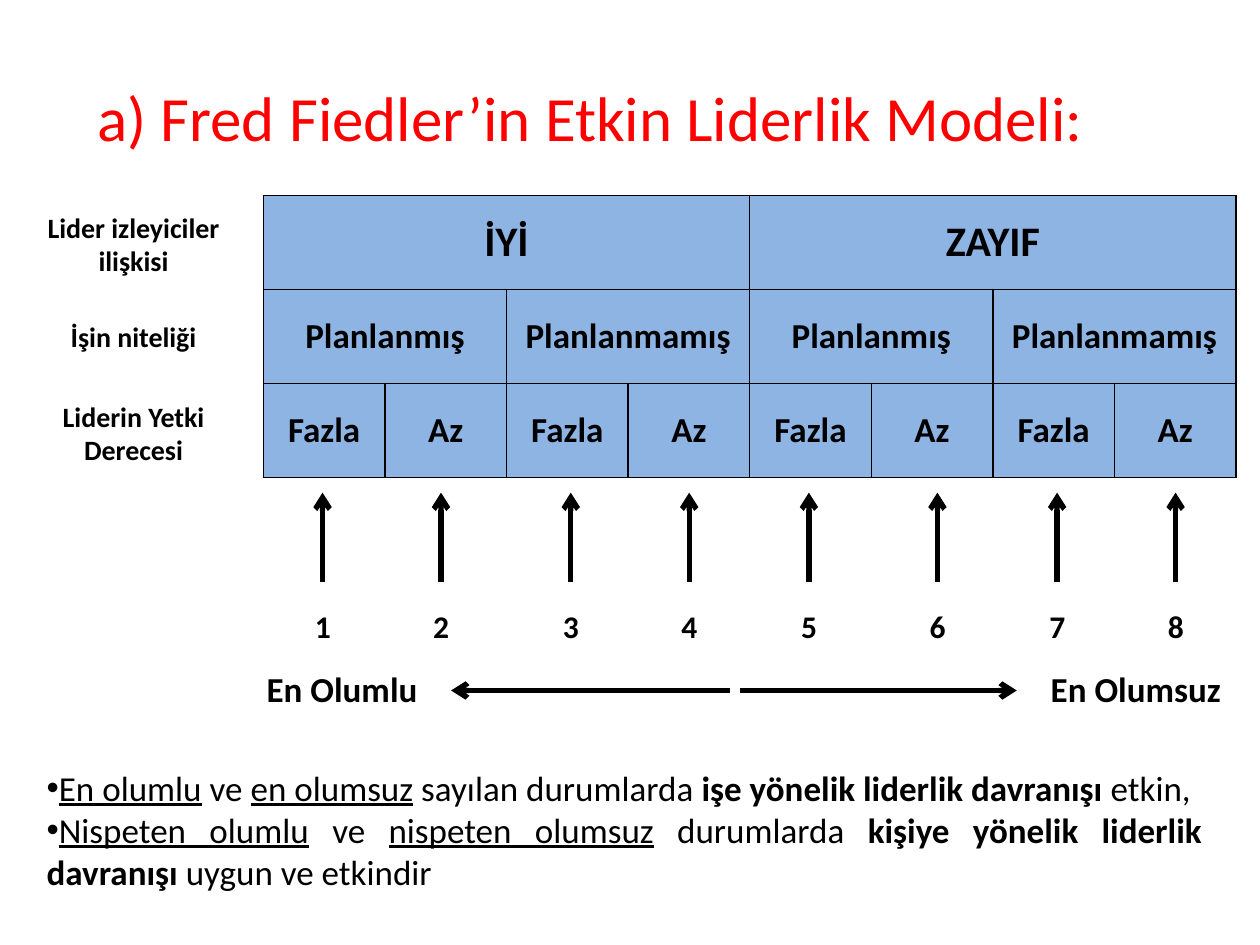
"""Build a slide on Fiedler's leadership model with its situation table."""
from dataclasses import dataclass

import lxml.etree
import pptx
import pptx.dml.color
import pptx.enum.shapes
import pptx.enum.text
import pptx.oxml
import pptx.oxml.ns
import pptx.util

Inches = pptx.util.Inches
Align = pptx.enum.text.PP_ALIGN
Anchor = pptx.enum.text.MSO_ANCHOR
qn = pptx.oxml.ns.qn


@dataclass(frozen=True)
class Theme:
    font: str = "Calibri"
    ink: str = "000000"
    title_ink: str = "FF0000"
    cell_fill: str = "8EB4E3"
    title: int = 36
    heading: int = 24
    body: int = 20
    number: int = 18
    label: int = 16
    arrow: int = 3
    border: int = 1


@dataclass(frozen=True)
class Span:
    text: str
    bold: bool = False
    underline: bool = False


@dataclass(frozen=True)
class Label:
    text: str
    left: float
    top: float
    width: float
    height: float
    size: int
    align: Align = Align.CENTER


@dataclass(frozen=True)
class Arrow:
    start: tuple[float, float]
    end: tuple[float, float]


@dataclass(frozen=True)
class Level:
    texts: tuple[str, ...]
    size: int


THEME = Theme()
COLUMNS = 8
LEVELS = (
    Level(("İYİ", "ZAYIF"), THEME.heading),
    Level(("Planlanmış", "Planlanmamış") * 2, THEME.body),
    Level(("Fazla", "Az") * 4, THEME.body),
)
ARROW_CENTRES = (2.56, 3.5, 4.53, 5.47, 6.42, 7.44, 8.39, 9.33)
LABELS = (
    Label("Lider izleyiciler ilişkisi", 0.27, 1.62, 1.58, 0.64, THEME.label),
    Label("İşin niteliği", 0.27, 2.49, 1.58, 0.37, THEME.label),
    Label("Liderin Yetki Derecesi", 0.27, 3.12, 1.58, 0.64, THEME.label),
    Label("En Olumlu", 1.93, 5.25, 1.57, 0.44, THEME.body),
    Label("En Olumsuz", 8.23, 5.25, 1.57, 0.44, THEME.body),
)
SCALE_ARROWS = (Arrow((5.79, 5.48), (3.58, 5.48)), Arrow((5.87, 5.48), (8.07, 5.48)))
FINDINGS = (
    (
        Span("En olumlu", underline=True),
        Span(" ve "),
        Span("en olumsuz", underline=True),
        Span(" sayılan durumlarda "),
        Span("işe yönelik liderlik davranışı ", bold=True),
        Span("etkin,"),
    ),
    (
        Span("Nispeten olumlu", underline=True),
        Span(" ve "),
        Span("nispeten olumsuz", underline=True),
        Span(" durumlarda "),
        Span("kişiye yönelik liderlik davranışı ", bold=True),
        Span("uygun ve etkindir"),
    ),
)


def rgb(value: str) -> pptx.dml.color.RGBColor:
    return pptx.dml.color.RGBColor.from_string(value)


def add_span(para, span: Span, size: int, color: str = THEME.ink) -> None:
    run = para.add_run()
    run.text = span.text
    run.font.name = THEME.font
    run.font.size = pptx.util.Pt(size)
    run.font.bold = span.bold
    run.font.underline = span.underline
    run.font.color.rgb = rgb(color)


def place(shape, left: float, top: float, width: float, height: float) -> None:
    shape.left, shape.top = Inches(left), Inches(top)
    shape.width, shape.height = Inches(width), Inches(height)


def add_label(page, label: Label) -> None:
    box = page.shapes.add_textbox(
        Inches(label.left), Inches(label.top), Inches(label.width), Inches(label.height)
    )
    box.text_frame.word_wrap = True
    para = box.text_frame.paragraphs[0]
    para.alignment = label.align
    add_span(para, Span(label.text, bold=True), label.size)


def add_arrow(page, arrow: Arrow) -> None:
    line = page.shapes.add_connector(
        pptx.enum.shapes.MSO_CONNECTOR.STRAIGHT,
        *(Inches(value) for value in arrow.start + arrow.end),
    )
    line.line.color.rgb = rgb(THEME.ink)
    line.line.width = pptx.util.Pt(THEME.arrow)
    outline = line.line._get_or_add_ln()
    lxml.etree.SubElement(outline, qn("a:tailEnd"), type="arrow")
    lxml.etree.SubElement(line._element.spPr, qn("a:effectLst"))


def style_cell(cell) -> None:
    cell.fill.solid()
    cell.fill.fore_color.rgb = rgb(THEME.cell_fill)
    cell.vertical_anchor = Anchor.MIDDLE
    properties = cell._tc.get_or_add_tcPr()
    for index, side in enumerate(("lnL", "lnR", "lnT", "lnB")):
        border = lxml.etree.Element(qn(f"a:{side}"), w=str(pptx.util.Pt(THEME.border)))
        fill = lxml.etree.SubElement(border, qn("a:solidFill"))
        lxml.etree.SubElement(fill, qn("a:srgbClr"), val=THEME.ink)
        properties.insert(index, border)


def add_situations(page) -> None:
    table = page.shapes.add_table(
        len(LEVELS), COLUMNS, Inches(2.09), Inches(1.55), Inches(7.72), Inches(2.24)
    ).table
    for cell in table.iter_cells():
        style_cell(cell)
    for row, level in enumerate(LEVELS):
        reach = COLUMNS // len(level.texts)
        for index, text in enumerate(level.texts):
            cell = table.cell(row, index * reach)
            if reach > 1:
                cell.merge(table.cell(row, (index + 1) * reach - 1))
            para = cell.text_frame.paragraphs[0]
            para.alignment = Align.CENTER
            add_span(para, Span(text, bold=True), level.size)


def fill_title(title) -> None:
    place(title, 0.67, 0.3, 9.33, 1.25)
    title.text_frame.vertical_anchor = Anchor.MIDDLE
    para = title.text_frame.paragraphs[0]
    para.alignment = Align.LEFT
    add_span(para, Span("a) Fred Fiedler’in Etkin Liderlik Modeli:"), THEME.title, THEME.title_ink)


def fill_findings(body) -> None:
    place(body, 0.27, 6.03, 9.37, 1.11)
    frame = body.text_frame
    for index, spans in enumerate(FINDINGS):
        para = frame.add_paragraph() if index else frame.paragraphs[0]
        para.alignment = Align.JUSTIFY
        para.space_before = pptx.util.Pt(0)
        properties = para._p.get_or_add_pPr()
        properties.set("marL", "0")
        properties.set("indent", "0")
        lxml.etree.SubElement(properties, qn("a:buFont"), typeface="Arial")
        lxml.etree.SubElement(properties, qn("a:buChar"), char="•")
        for span in spans:
            add_span(para, span, THEME.body)


def main() -> None:
    deck = pptx.Presentation()
    deck.slide_width, deck.slide_height = Inches(10), Inches(7.5)
    page = deck.slides.add_slide(deck.slide_layouts[1])
    fill_title(page.shapes.title)
    fill_findings(page.placeholders[1])
    add_situations(page)
    for label in LABELS:
        add_label(page, label)
    for number, centre in enumerate(ARROW_CENTRES, 1):
        add_arrow(page, Arrow((centre, 4.62), (centre, 3.91)))
        add_label(
            page, Label(str(number), centre - 0.16, 4.77, 0.47, 0.4, THEME.number, Align.LEFT)
        )
    for arrow in SCALE_ARROWS:
        add_arrow(page, arrow)
    deck.save("out.pptx")


if __name__ == "__main__":
    main()
